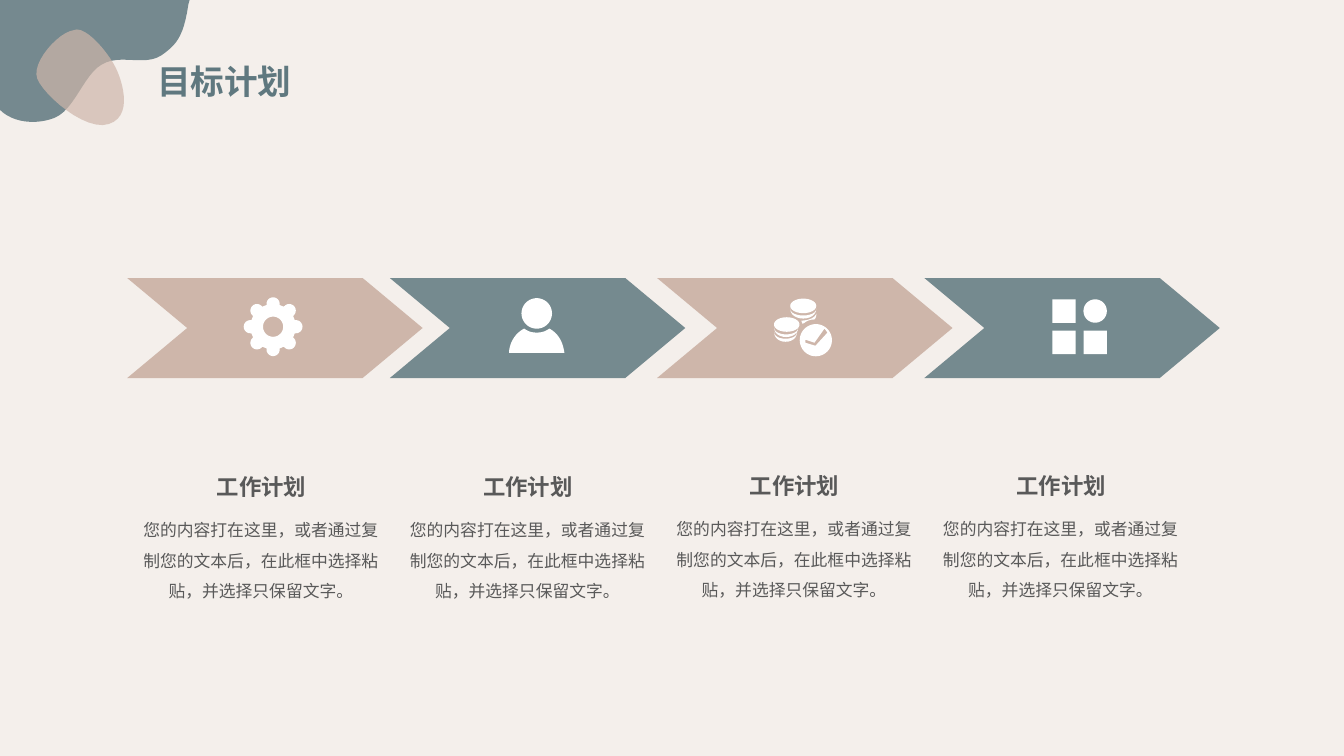
"""Build the goal plan slide: four chevron steps with icons and captions."""
import math

from lxml import etree
from pptx import Presentation
from pptx.dml.color import RGBColor
from pptx.enum import shapes, text
from pptx.oxml.ns import qn
from pptx.util import Pt

CREAM = RGBColor(0xF4, 0xEF, 0xEB)
TEAL = RGBColor(0x75, 0x8A, 0x8F)
DEEP_TEAL = RGBColor(0x5F, 0x78, 0x7F)
ROSE = RGBColor(0xCE, 0xB6, 0xAA)
GREY = RGBColor(0x59, 0x59, 0x59)
WHITE = RGBColor(0xFF, 0xFF, 0xFF)
FONT = "Noto Sans CJK SC"
HEADING = "工作计划"
BODY = "您的内容打在这里，或者通过复制您的文本后，在此框中选择粘贴，并选择只保留文字。"

CORNER_BLOB = [(0, 77.8), (0, 0), (135.4, 0), (134.6, 2.9),
               (131, 27.4, 125.3, 32.4, 115.2, 39.6),
               (103, 47.5, 85.7, 38.2, 72.7, 46.1),
               (59.8, 53.3, 53.3, 78.5, 38.9, 84.2),
               (25.9, 89.3, 9.4, 87.8, 0, 78.5)]
PEBBLE = [(52.6, 21.6), (61.2, 17.3, 79.9, 40.3, 84.2, 51.8),
          (88.6, 62.6, 93.6, 83.5, 77.8, 88.6),
          (61.2, 94.3, 31, 67.7, 26.6, 56.2),
          (22.3, 44.6, 41.8, 23, 52.6, 21.6)]
SHOULDERS = [(363.6, 252), (363.6, 249.1, 365, 239.8, 374.4, 234.7),
             (377.3, 236.9, 380.2, 237.6, 383.4, 237.6),
             (386.6, 237.6, 389.5, 236.9, 392.4, 234.7),
             (401.8, 239.8, 402.5, 249.1, 403.2, 252)]
COIN_EDGE = [(572.4, 229), (576.7, 229, 581.8, 227.5, 583.2, 224),
             (583.2, 226.1, 582.5, 227.5, 581.8, 228.2),
             (578.9, 228.2, 577.4, 229, 576, 229.7),
             (574.6, 230.4, 574.6, 231.1, 573.1, 231.1)]
CHECK = [(582.5, 247), (575.3, 244.8), (575.3, 242.6), (581.8, 244.8),
         (589, 234.7), (591.1, 237.6)]


def flatten(outline, steps=12):
    """Turn line points and cubic curve tuples into a list of points."""
    points = [outline[0]]
    for part in outline[1:]:
        if len(part) == 2:
            points.append(part)
            continue
        knots = [points[-1], part[:2], part[2:4], part[4:]]
        for i in range(1, steps + 1):
            t = i / steps
            weights = ((1 - t) ** 3, 3 * t * (1 - t) ** 2, 3 * t * t * (1 - t), t ** 3)
            points.append(tuple(sum(w * k[axis] for w, k in zip(weights, knots))
                                for axis in (0, 1)))
    return points


def ellipse(cx, cy, rx, ry=None, count=48):
    """Return the points of an ellipse."""
    ry = ry or rx
    turns = [2 * math.pi * i / count for i in range(count)]
    return [(cx + rx * math.cos(a), cy - ry * math.sin(a)) for a in turns]


def square(x, y, side):
    """Return the corners of a square."""
    return [(x, y), (x + side, y), (x + side, y + side), (x, y + side)]


def band(cx, y, half, inner, outer):
    """Return a crescent that hangs below a coin."""
    left, right = cx - half, cx + half
    return [(left, y), (left, y + inner, right, y + inner, right, y),
            (right, y + outer, left, y + outer, left, y)]


def cog(cx, cy, teeth=8):
    """Return the outline of a gear with round teeth."""
    half, reach, valley = 4.7, 16.3, 15.5
    bends = [math.radians(d) for d in range(-90, 91, 15)]
    tooth = [(valley, -half)]
    tooth += [(reach + half * math.cos(b), half * math.sin(b)) for b in bends]
    tooth.append((valley, half))
    turns = [2 * math.pi * k / teeth for k in range(teeth)]
    return [(cx + x * math.cos(a) - y * math.sin(a), cy + x * math.sin(a) + y * math.cos(a))
            for a in turns for x, y in tooth]


def paint(sp, color, opacity=None):
    """Give a shape a plain fill without line or shadow."""
    sp.shadow.inherit = False
    sp.line.fill.background()
    sp.fill.solid()
    sp.fill.fore_color.rgb = color
    if opacity:
        clr = sp._element.spPr.find(qn("a:solidFill")).find(qn("a:srgbClr"))
        etree.SubElement(clr, qn("a:alpha")).set("val", str(opacity * 1000))


def add_outline(s, outlines, color, opacity=None):
    """Draw closed outlines, given in points, as one freeform."""
    builder = None
    for outline in outlines:
        points = [(Pt(x), Pt(y)) for x, y in flatten(outline)]
        if builder is None:
            builder = s.shapes.build_freeform(*points[0], scale=1.0)
        else:
            builder.move_to(*points[0])
        builder.add_line_segments(points[1:], close=True)
    paint(builder.convert_to_shape(), color, opacity)


def add_chevron(s, x, color):
    """Draw one step of the process arrow."""
    sp = s.shapes.add_shape(shapes.MSO_SHAPE.CHEVRON, Pt(x), Pt(198.6), Pt(211), Pt(71.4))
    sp.adjustments[0] = 0.6
    paint(sp, color)


def add_text(s, content, x, y, w, h, size, color=GREY, bold=False, align=None,
             spacing=None, inset=0, wrap=True):
    """Add a text box with one formatted paragraph."""
    sp = s.shapes.add_textbox(Pt(x), Pt(y), Pt(w), Pt(h))
    tf = sp.text_frame
    tf.word_wrap = wrap
    tf.auto_size = text.MSO_AUTO_SIZE.SHAPE_TO_FIT_TEXT
    tf.margin_left = tf.margin_right = Pt(inset)
    tf.margin_top = tf.margin_bottom = Pt(inset / 2)
    p = tf.paragraphs[0]
    p.alignment = align
    p.line_spacing = spacing
    r = p.add_run()
    r.text = content
    r.font.size, r.font.bold, r.font.name = Pt(size), bold, FONT
    r.font.color.rgb = color
    etree.SubElement(r._r.get_or_add_rPr(), qn("a:ea")).set("typeface", FONT)


def add_caption(s, x, y):
    """Add a heading and its centred description."""
    center = text.PP_ALIGN.CENTER
    add_text(s, HEADING, x + 47.5, y, 78.5, 19.4, 16, bold=True, align=center)
    add_text(s, BODY, x, y + 26.6, 172.8, 65.5, 12, align=center, spacing=1.5)


def add_icons(s):
    """Draw the gear, person, coins and tiles."""
    gear = [cog(195.1, 233.4), ellipse(195.1, 233.4, 7.2)[::-1]]
    person = [ellipse(383.4, 223.9, 10.9), SHOULDERS]
    coins = [ellipse(573.8, 218.5, 9.3, 5.2), band(573.8, 220.5, 9.3, 6.5, 9.4), COIN_EDGE,
             ellipse(562, 231.8, 9.1, 5.2), band(561.6, 234, 8.6, 6.5, 9),
             band(561.2, 237.1, 8.2, 6.5, 9.4), ellipse(582.8, 243, 11.5), CHECK]
    tiles = [square(751.7, 213.9, 16.7), square(751.7, 236.2, 16.7),
             square(774, 236.2, 16.7), ellipse(782.3, 222.2, 8.35)]
    for icon in (gear, person, coins, tiles):
        add_outline(s, icon, WHITE)


def main():
    """Build and save the slide."""
    prs = Presentation()
    prs.slide_width, prs.slide_height = Pt(960), Pt(540)
    s = prs.slides.add_slide(prs.slide_layouts[6])
    s.background.fill.solid()
    s.background.fill.fore_color.rgb = CREAM
    for x, color in zip((90.9, 278.5, 469.4, 660.3), (ROSE, TEAL, ROSE, TEAL)):
        add_chevron(s, x, color)
    for i, y in enumerate((337.7, 337.7, 337, 337)):
        add_caption(s, 100 + 190.4 * i, y)
    add_icons(s)
    add_outline(s, [CORNER_BLOB], DEEP_TEAL, 85)
    add_outline(s, [PEBBLE], ROSE, 70)
    add_text(s, "目标计划", 105.1, 40.3, 111.6, 36, 24, DEEP_TEAL, True, inset=7.2, wrap=False)
    prs.save("out.pptx")


if __name__ == "__main__":
    main()
